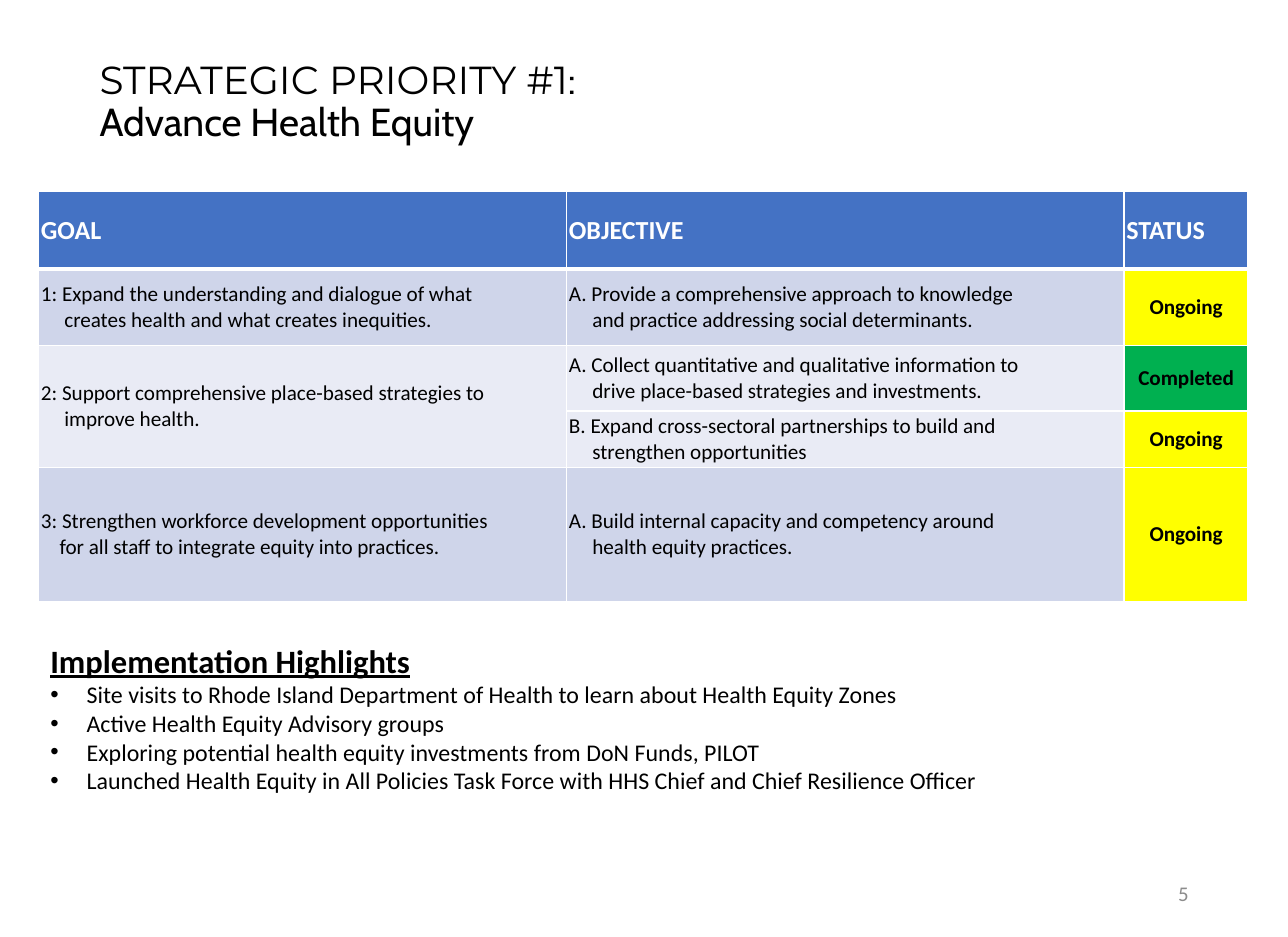
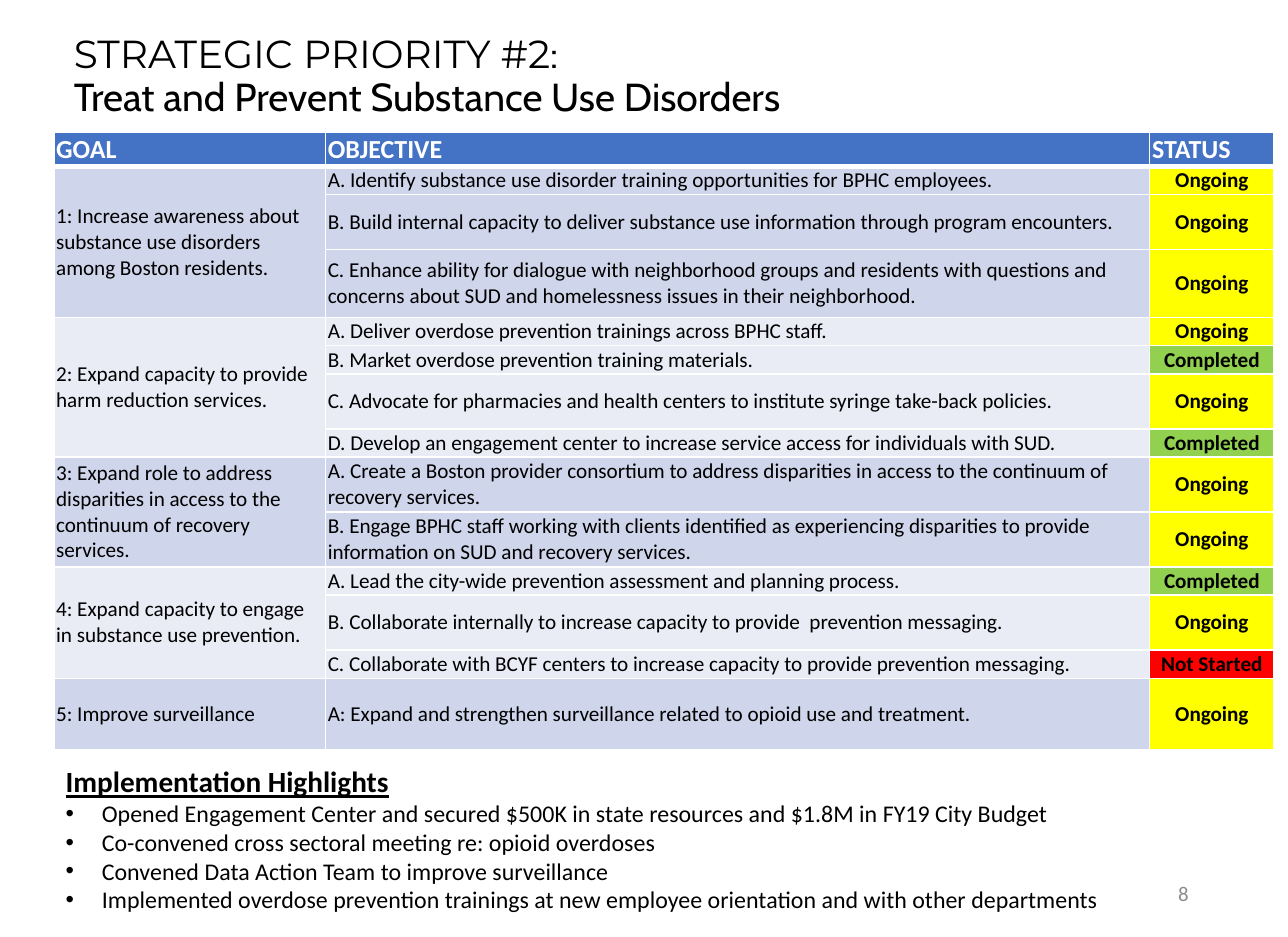
from lxml import etree
from pptx import Presentation
from pptx.dml.color import RGBColor
from pptx.enum.text import MSO_ANCHOR, MSO_AUTO_SIZE, PP_ALIGN
from pptx.oxml.ns import qn
from pptx.util import Inches, Pt

LEFT, CENTER, RIGHT = PP_ALIGN.LEFT, PP_ALIGN.CENTER, PP_ALIGN.RIGHT
TOP, MIDDLE, BOTTOM = MSO_ANCHOR.TOP, MSO_ANCHOR.MIDDLE, MSO_ANCHOR.BOTTOM
NO_AUTOFIT = MSO_AUTO_SIZE.NONE

BLACK = RGBColor(0x00, 0x00, 0x00)
WHITE = RGBColor(0xFF, 0xFF, 0xFF)
GRAY = RGBColor(0x8C, 0x8C, 0x8C)
BLUE = RGBColor(0x44, 0x72, 0xC4)
BANDS = [RGBColor(0xCF, 0xD5, 0xEA), RGBColor(0xE9, 0xEB, 0xF5)]
YELLOW = RGBColor(0xFF, 0xFF, 0x00)
RED = RGBColor(0xFF, 0x00, 0x00)
DARK_GREEN = RGBColor(0x00, 0xB0, 0x50)
LIGHT_GREEN = RGBColor(0x92, 0xD0, 0x50)

HEADINGS = ["GOAL", "OBJECTIVE", "STATUS"]
ONGOING, COMPLETED, NOT_STARTED = "Ongoing", "Completed", "Not Started"
CELL_MARGINS = {
    "margin_left": Inches(0.02), "margin_right": Inches(0.02),
    "margin_top": Inches(0.01), "margin_bottom": Inches(0.01),
}
TITLE_FRAME = {
    **CELL_MARGINS, "vertical_anchor": BOTTOM,
    "word_wrap": True, "auto_size": NO_AUTOFIT,
}
HIGHLIGHTS_FRAME = {
    "vertical_anchor": TOP, "word_wrap": True, "auto_size": NO_AUTOFIT,
}
HEADING_FONT = {"name": "Calibri", "size": Pt(16), "bold": True}
CELL_FONT = {"name": "Calibri", "size": Pt(13), "bold": False}
STATUS_FONT = {**CELL_FONT, "bold": True}
BULLET_FONT = {"name": "Calibri", "size": Pt(14.7)}

PRIORITIES = [
    {
        "number": "1",
        "name": "Advance Health Equity",
        "title_box": (0.83, 0.89, 6.65, 0.36),
        "table_at": (0.33, 1.63),
        "columns": [4.51, 4.76, 1.06],
        "heading_height": 0.67,
        "completed": DARK_GREEN,
        "goals": [
            ("1: Expand the understanding and dialogue of what\n"
             "creates health and what creates inequities.", 0.2, [
                 ("A. Provide a comprehensive approach to knowledge\n"
                  "and practice addressing social determinants.", ONGOING, 0.65)]),
            ("2: Support comprehensive place-based strategies to\n"
             "improve health.", 0.2, [
                 ("A. Collect quantitative and qualitative information to\n"
                  "drive place-based strategies and investments.", COMPLETED, 0.56),
                 ("B. Expand cross-sectoral partnerships to build and\n"
                  "strengthen opportunities", ONGOING, 0.48)]),
            ("3: Strengthen workforce development opportunities\n"
             "for all staff to integrate equity into practices.", 0.16, [
                 ("A. Build internal capacity and competency around\n"
                  "health equity practices.", ONGOING, 1.15)]),
        ],
        "highlights_box": (0.33, 5.42, 10.28, 1.76),
        "highlights_size": 20,
        "highlights": [
            "Site visits to Rhode Island Department of Health to learn about Health Equity Zones",
            "Active Health Equity Advisory groups",
            "Exploring potential health equity investments from DoN Funds, PILOT",
            "Launched Health Equity in All Policies Task Force with HHS Chief and Chief Resilience Officer",
        ],
        "page": "5",
    },
    {
        "number": "2",
        "name": "Treat and Prevent Substance Use Disorders",
        "title_box": (0.61, 0.67, 7.88, 0.36),
        "table_at": (0.46, 1.13),
        "columns": [2.32, 7.04, 1.06],
        "heading_height": 0.29,
        "completed": LIGHT_GREEN,
        "goals": [
            ("1: Increase awareness about substance use disorders among Boston residents.", 0, [
                ("A. Identify substance use disorder training opportunities for BPHC employees.",
                 ONGOING, 0.24),
                ("B. Build internal capacity to deliver substance use information through "
                 "program encounters.", ONGOING, 0.47),
                ("C. Enhance ability for dialogue with neighborhood groups and residents with "
                 "questions and concerns about SUD and homelessness issues in their neighborhood.",
                 ONGOING, 0.58)]),
            ("2: Expand capacity to provide harm reduction services.", 0, [
                ("A. Deliver overdose prevention trainings across BPHC staff.", ONGOING, 0.24),
                ("B. Market overdose prevention training materials.", COMPLETED, 0.24),
                ("C. Advocate for pharmacies and health centers to institute syringe "
                 "take-back policies.", ONGOING, 0.47),
                ("D. Develop an engagement center to increase service access for "
                 "individuals with SUD.", COMPLETED, 0.24)]),
            ("3: Expand role to address disparities in access to the continuum of "
             "recovery services.", 0, [
                 ("A. Create a Boston provider consortium to address disparities in access to "
                  "the continuum of recovery services.", ONGOING, 0.47),
                 ("B. Engage BPHC staff working with clients identified as experiencing "
                  "disparities to provide information on SUD and recovery services.",
                  ONGOING, 0.47)]),
            ("4: Expand capacity to engage in substance use prevention.", 0, [
                ("A. Lead the city-wide prevention assessment and planning process.",
                 COMPLETED, 0.24),
                ("B. Collaborate internally to increase capacity to provide  prevention messaging.",
                 ONGOING, 0.47),
                ("C. Collaborate with BCYF centers to increase capacity to provide "
                 "prevention messaging.", NOT_STARTED, 0.24)]),
            ("5: Improve surveillance", 0, [
                ("A: Expand and strengthen surveillance related to opioid use and treatment.",
                 ONGOING, 0.61)]),
        ],
        "highlights_box": (0.46, 6.47, 9.75, 1.39),
        "highlights_size": 18,
        "highlights": [
            "Opened Engagement Center and secured $500K in state resources and $1.8M in FY19 City Budget",
            "Co-convened cross sectoral meeting re: opioid overdoses",
            "Convened Data Action Team to improve surveillance",
            "Implemented overdose prevention trainings at new employee orientation and with other departments",
        ],
        "page": "8",
    },
]


def add_run(paragraph, text, color, font_values):
    run = paragraph.add_run()
    run.text = text
    run.font.color.rgb = color
    for key, value in font_values.items():
        setattr(run.font, key, value)


def fill_cell(cell, text, fill, color, font_values, align=LEFT, indent=0, top=1, bottom=1):
    for key, value in {**CELL_MARGINS, "vertical_anchor": MIDDLE}.items():
        setattr(cell, key, value)
    properties = cell._tc.get_or_add_tcPr()
    for side, width in {"lnL": 1, "lnR": 1, "lnT": top, "lnB": bottom}.items():
        border = etree.SubElement(properties, qn(f"a:{side}"), w=str(Pt(width)))
        solid = etree.SubElement(border, qn("a:solidFill"))
        etree.SubElement(solid, qn("a:srgbClr"), val=str(WHITE))
    cell.fill.solid()
    cell.fill.fore_color.rgb = fill
    for position, line in enumerate(text.split("\n") if text else []):
        paragraph = cell.text_frame.add_paragraph() if position else cell.text_frame.paragraphs[0]
        paragraph.alignment = align
        if position:
            paragraph._p.get_or_add_pPr().set("marL", str(Inches(indent)))
        add_run(paragraph, line, color, font_values)


prs = Presentation()
prs.slide_width, prs.slide_height = Inches(11), Inches(8)

for priority in PRIORITIES:
    slide = prs.slides.add_slide(prs.slide_layouts[1])
    title, highlights = slide.shapes.title, slide.placeholders[1]
    for placeholder, box, frame_values in [
        (title, priority["title_box"], TITLE_FRAME),
        (highlights, priority["highlights_box"], HIGHLIGHTS_FRAME),
    ]:
        for key, length in zip(["left", "top", "width", "height"], box):
            setattr(placeholder, key, Inches(length))
        for key, value in frame_values.items():
            setattr(placeholder.text_frame, key, value)

    label = title.text_frame.paragraphs[0]
    add_run(label, f"STRATEGIC PRIORITY #{priority['number']}", BLACK,
            {"name": "Montserrat", "size": Pt(24)})
    name = title.text_frame.add_paragraph()
    for paragraph, text in [(label, ":"), (name, priority["name"])]:
        paragraph.alignment = LEFT
        paragraph.line_spacing = 0.9
        add_run(paragraph, text, BLACK, {"name": "Cabin", "size": Pt(24)})

    heights = [priority["heading_height"]]
    heights += [height for goal in priority["goals"] for _, _, height in goal[2]]
    left, top = priority["table_at"]
    goals_table = slide.shapes.add_table(
        len(heights), len(HEADINGS), Inches(left), Inches(top),
        Inches(sum(priority["columns"])), Inches(sum(heights))).table
    for column, width in zip(goals_table.columns, priority["columns"]):
        column.width = Inches(width)
    for row, height in zip(goals_table.rows, heights):
        row.height = Inches(height)
    for index, heading in enumerate(HEADINGS):
        fill_cell(goals_table.cell(0, index), heading, BLUE, WHITE, HEADING_FONT, bottom=3)

    status_fills = {ONGOING: YELLOW, COMPLETED: priority["completed"], NOT_STARTED: RED}
    row_index = 1
    for goal_index, (goal, indent, objectives) in enumerate(priority["goals"]):
        band = BANDS[goal_index % 2]
        first_row = row_index
        for objective, status, _ in objectives:
            edge = 3 if row_index == 1 else 1
            goal_cell, objective_cell, status_cell = goals_table.rows[row_index].cells
            fill_cell(goal_cell, goal if row_index == first_row else "", band, BLACK,
                      CELL_FONT, indent=indent, top=edge)
            fill_cell(objective_cell, objective, band, BLACK, CELL_FONT, indent=0.2, top=edge)
            fill_cell(status_cell, status, status_fills[status], BLACK, STATUS_FONT,
                      align=CENTER, top=edge)
            row_index += 1
        if len(objectives) > 1:
            goals_table.cell(first_row, 0).merge(goals_table.cell(row_index - 1, 0))

    heading = highlights.text_frame.paragraphs[0]
    heading.space_before = Pt(0)
    heading_properties = heading._p.get_or_add_pPr()
    heading_properties.set("marL", "0")
    heading_properties.set("indent", "0")
    etree.SubElement(heading_properties, qn("a:buNone"))
    add_run(heading, "Implementation Highlights", BLACK, {
        "name": "Calibri", "size": Pt(priority["highlights_size"]),
        "bold": True, "underline": True})
    for highlight in priority["highlights"]:
        bullet = highlights.text_frame.add_paragraph()
        bullet.space_before = Pt(0)
        bullet_properties = bullet._p.get_or_add_pPr()
        bullet_properties.set("marL", str(Inches(0.31)))
        bullet_properties.set("indent", str(Inches(-0.31)))
        etree.SubElement(bullet_properties, qn("a:buFont"), typeface="Arial")
        etree.SubElement(bullet_properties, qn("a:buChar"), char="•")
        add_run(bullet, highlight, BLACK, BULLET_FONT)

    page = slide.shapes.add_textbox(Inches(7.77), Inches(7.41), Inches(2.48), Inches(0.43))
    page.text_frame.word_wrap = True
    page.text_frame.vertical_anchor = MIDDLE
    page_number = page.text_frame.paragraphs[0]
    page_number.alignment = RIGHT
    add_run(page_number, priority["page"], GRAY, {"name": "Calibri", "size": Pt(12.8)})

prs.save("out.pptx")
